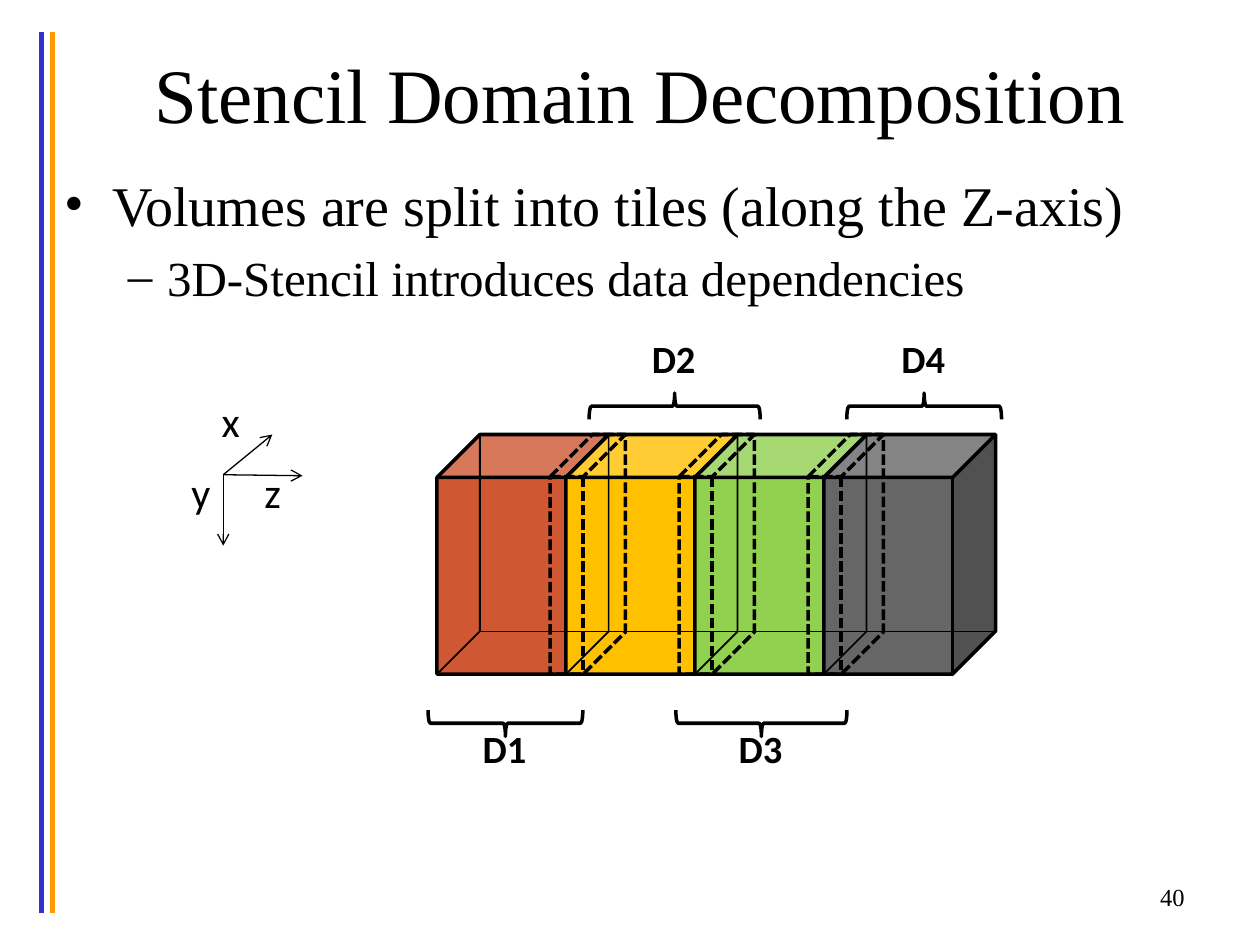
from lxml import etree
from pptx import Presentation
from pptx.dml.color import RGBColor
from pptx.enum.dml import MSO_LINE
from pptx.enum.shapes import MSO_CONNECTOR, MSO_SHAPE
from pptx.enum.text import PP_ALIGN
from pptx.oxml.ns import qn
from pptx.util import Cm, Pt

STRAIGHT = MSO_CONNECTOR.STRAIGHT
CUBE, BRACE = MSO_SHAPE.CUBE, MSO_SHAPE.LEFT_BRACE
DASH = MSO_LINE.SQUARE_DOT
LEFT, CENTER, RIGHT = PP_ALIGN.LEFT, PP_ALIGN.CENTER, PP_ALIGN.RIGHT

BLACK = "000000"
SERIF, SANS = "Times New Roman", "Calibri"
TILE_COLORS = ["CF5731", "FFC000", "92D050", "666666"]


def color(hex_value):
    """Return the colour for a hex string."""
    return RGBColor.from_string(hex_value)


def apply(target, values):
    """Set each attribute named in values on target."""
    for name, value in values.items():
        setattr(target, name, value)


def add_text(slide, box, paragraphs, size, font=SERIF, align=LEFT, bold=False, wrap=True, inset=0.13):
    """Add a text box and return its paragraphs."""
    frame = slide.shapes.add_textbox(*map(Cm, box)).text_frame
    apply(frame, {"word_wrap": wrap, "margin_top": Cm(inset), "text": "\n".join(paragraphs)})
    for paragraph in frame.paragraphs:
        paragraph.alignment = align
        run_font = paragraph.runs[0].font
        apply(run_font, {"name": font, "size": Pt(size), "bold": bold})
        run_font.color.rgb = color(BLACK)
    return frame.paragraphs


def add_line(slide, start, end, hex_value, width, arrow=False):
    """Add a straight line, with an open arrowhead on request."""
    connector = slide.shapes.add_connector(STRAIGHT, *map(Cm, start + end))
    connector.line.color.rgb = color(hex_value)
    connector.line.width = Pt(width)
    if arrow:
        etree.SubElement(connector.line._get_or_add_ln(), qn("a:tailEnd"), type="arrow")
    etree.SubElement(connector._element.spPr, qn("a:effectLst"))


def add_outline(slide, preset, box, width, adjust=None, fill=None, dash=None, rotation=0):
    """Add a black-outlined preset shape, unfilled by default."""
    shape = slide.shapes.add_shape(preset, *map(Cm, box))
    shape.shadow.inherit = False
    shape.rotation = rotation
    if adjust is not None:
        shape.adjustments[0] = adjust
    if fill:
        shape.fill.solid()
        shape.fill.fore_color.rgb = color(fill)
    else:
        shape.fill.background()
    shape.line.color.rgb = color(BLACK)
    apply(shape.line, {"width": Pt(width), "dash_style": dash})


def draw_frame(slide):
    """Draw the side rules, the title and the page number."""
    for x, hex_value in [(0.84, "3333CC"), (1.06, "FF9900")]:
        add_line(slide, (x, 0.64), (x, 18.41), hex_value, 3)
    add_text(slide, (1.9, 0.64, 22.02, 3.18), ["Stencil Domain Decomposition"], 44, align=CENTER, inset=0.3)
    add_text(slide, (22.66, 17.65, 1.47, 1.02), ["40"], 14, align=RIGHT)


def draw_bullets(slide, box):
    """Write the two bullet levels."""
    points = ["Volumes are split into tiles (along the Z-axis)", "3D-Stencil introduces data dependencies"]
    levels = [(32, "•", 0.95, 0.95), (28, "–", 2.06, 0.79)]
    paragraphs = add_text(slide, box, points, 32, inset=0.05)
    for level, (paragraph, (size, bullet, margin, hang)) in enumerate(zip(paragraphs, levels)):
        apply(paragraph, {"level": level, "space_before": Pt(size / 5)})
        paragraph.runs[0].font.size = Pt(size)
        properties = paragraph._p.get_or_add_pPr()
        properties.set("marL", str(Cm(margin)))
        properties.set("indent", str(-Cm(hang)))
        etree.SubElement(properties, qn("a:buFont"), typeface=SERIF)
        etree.SubElement(properties, qn("a:buChar"), char=bullet)


def draw_axes(slide, box):
    """Draw the x, y and z arrows with their letters."""
    left, top, width, height = box
    origin = (left, top + 0.81)
    tips = [(left + width, top + 0.83), (left, top + height), (left + 0.99, top)]
    for tip in tips:
        add_line(slide, origin, tip, BLACK, 0.75, arrow=True)
    for letter, dx, dy in [("x", -0.28, -0.91), ("y", -0.89, 0.51), ("z", 0.58, 0.51)]:
        add_text(slide, (left + dx, top + dy, 0.8, 1.02), [letter], 24, SANS, wrap=False)


def draw_volume(slide, box):
    """Draw the tiles, their overlap zones and their hidden edges."""
    left, top, width, height = box
    depth = 0.86
    step = (width - depth) / len(TILE_COLORS)
    edges = [left + i * step for i in range(len(TILE_COLORS) + 1)]
    for x, fill in zip(edges, TILE_COLORS):
        add_outline(slide, CUBE, (x, top, step + depth, height), 2, 0.25, fill)
    for x in edges[1:-1]:
        add_outline(slide, CUBE, (x - 0.32, top, 1.52, height), 2, 0.56, dash=DASH)
    for x in edges:
        add_outline(slide, CUBE, (x, top, depth, height), 1, 1)
    for x in edges[:-1]:
        add_outline(slide, CUBE, (x + depth, top, step, height - depth), 1, 0)


def draw_domains(slide, box):
    """Brace and name the domains, alternately below and above the volume."""
    left, top, _, height = box
    thickness = 0.53
    domains = [("D1", 1.38, 3.12), ("D2", 4.79, 3.45), ("D3", 6.54, 3.45), ("D4", 9.82, 3.12)]
    for i, (name, offset, span) in enumerate(domains):
        above = i % 2 == 1
        x = left + offset
        y = top - 0.57 if above else top + height + 0.99
        label_top = top - 2.13 if above else top + height + 0.89
        add_outline(slide, BRACE, (x - thickness / 2, y - span / 2, thickness, span), 2,
                    rotation=90 if above else 270)
        add_text(slide, (x - 0.71, label_top, 1.42, 1.22), [name], 22, SANS, bold=True, wrap=False)


def main():
    """Build and save the slide."""
    deck = Presentation()
    apply(deck, {"slide_width": Cm(25.4), "slide_height": Cm(19.05)})
    slide = deck.slides.add_slide(deck.slide_layouts[6])
    volume = (8.81, 8.76, 11.26, 4.83)
    draw_frame(slide)
    draw_bullets(slide, (1.06, 3.38, 23.06, 2.97))
    draw_axes(slide, (4.5, 8.76, 1.6, 2.24))
    draw_volume(slide, volume)
    draw_domains(slide, volume)
    deck.save("out.pptx")


if __name__ == "__main__":
    main()
